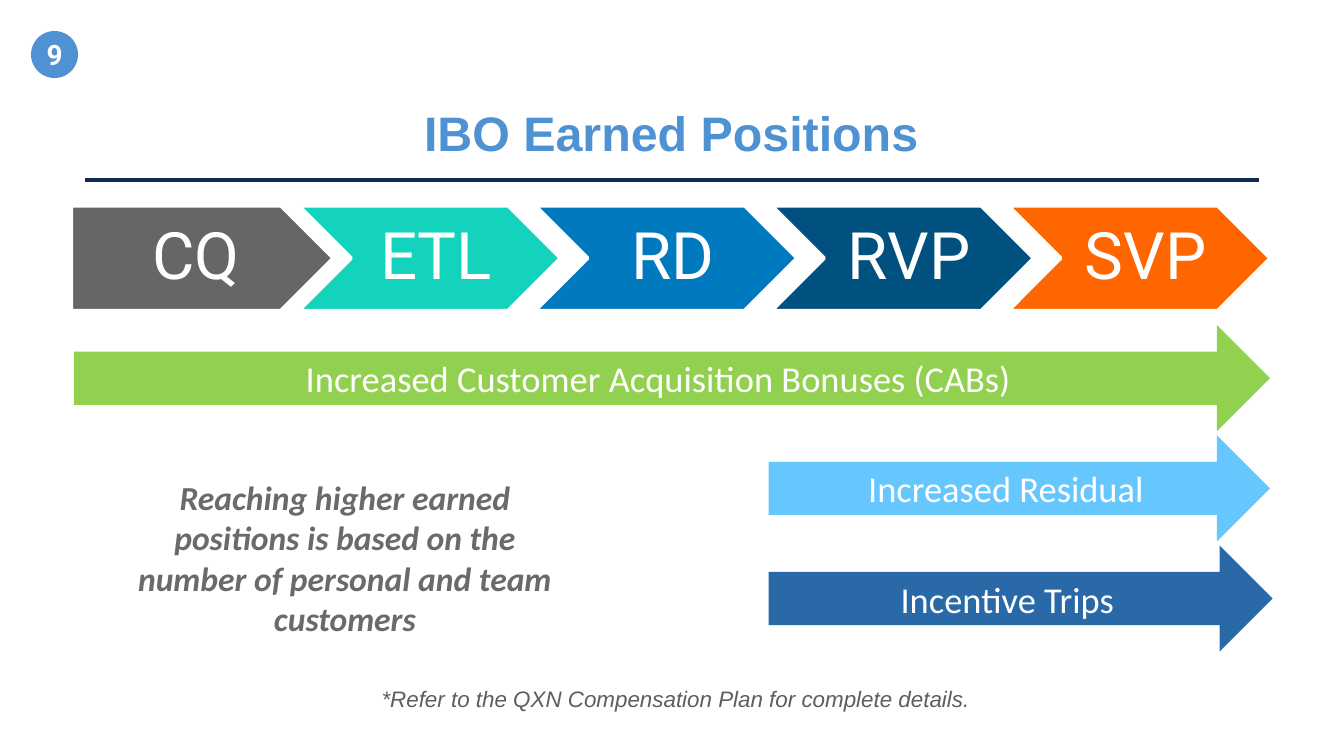
from dataclasses import dataclass

from lxml import etree
from pptx import Presentation
from pptx.dml.color import RGBColor
from pptx.enum import shapes, text
from pptx.oxml import ns
from pptx.util import Pt

WHITE = "FFFFFF"
BLUE = "4F92D3"
SHAPE = shapes.MSO_SHAPE
CENTER, LEFT = text.PP_ALIGN.CENTER, text.PP_ALIGN.LEFT
TOP, MIDDLE = text.MSO_ANCHOR.TOP, text.MSO_ANCHOR.MIDDLE


@dataclass(frozen=True)
class Area:
    left: float
    top: float
    width: float
    height: float

    def lengths(self) -> tuple:
        return Pt(self.left), Pt(self.top), Pt(self.width), Pt(self.height)


@dataclass(frozen=True)
class Style:
    font: str
    size: float
    color: str = WHITE
    bold: bool = False
    italic: bool = False
    align: int = CENTER
    anchor: int = MIDDLE
    spacing: float = 1.0
    wrap: bool = True
    margins: tuple = (7.2, 3.6, 7.2, 3.6)


@dataclass(frozen=True)
class Position:
    name: str
    color: str


@dataclass(frozen=True)
class Benefit:
    name: str
    color: str
    left: float
    width: float


TIGHT = (2, 2, 2, 2)
TITLE = Style("Arial", 25.9, BLUE, bold=True, anchor=TOP, spacing=0.8,
              wrap=False, margins=TIGHT)
NUMBER = Style("Roboto", 15, bold=True, wrap=False, margins=TIGHT)
POSITION = Style("Roboto", 35, spacing=0.9, margins=(10.8, 3.6, 3.6, 3.6))
BENEFIT = Style("Calibri", 19.5)
REMARK = Style("Calibri", 18, "6C6969", bold=True, italic=True, anchor=TOP)
FOOTNOTE = Style("Arial", 12, "5E5E5E", italic=True, align=LEFT,
                 wrap=False, margins=TIGHT)

POSITIONS = [
    Position("CQ", "666666"),
    Position("ETL", "13D3BC"),
    Position("RD", "0079BF"),
    Position("RVP", "005180"),
    Position("SVP", "FF6600"),
]
BENEFITS = [
    Benefit("Increased Customer Acquisition Bonuses (CABs)", "92D050", 39.6, 640.8),
    Benefit("Increased Residual", "66C7FF", 411.8, 268.6),
    Benefit("Incentive Trips", "2A69A8", 411.8, 270),
]


def rgb(color: str) -> RGBColor:
    return RGBColor.from_string(color)


def write(box, words: str, style: Style) -> None:
    frame = box.text_frame
    frame.text = words
    frame.word_wrap = style.wrap
    frame.vertical_anchor = style.anchor
    (frame.margin_left, frame.margin_top,
     frame.margin_right, frame.margin_bottom) = map(Pt, style.margins)
    para = frame.paragraphs[0]
    para.alignment = style.align
    para.line_spacing = style.spacing
    font = para.runs[0].font
    font.name, font.size = style.font, Pt(style.size)
    font.bold, font.italic = style.bold, style.italic
    font.color.rgb = rgb(style.color)


def add_text(page, area: Area, words: str, style: Style) -> None:
    write(page.shapes.add_textbox(*area.lengths()), words, style)


def add_filled(page, kind, area: Area, color: str):
    shape = page.shapes.add_shape(kind, *area.lengths())
    shape.shadow.inherit = False
    shape.fill.solid()
    shape.fill.fore_color.rgb = rgb(color)
    shape.line.fill.background()
    return shape


def add_rule(page, left: float, right: float, y: float) -> None:
    rule = page.shapes.add_connector(
        shapes.MSO_CONNECTOR.STRAIGHT, Pt(left), Pt(y), Pt(right), Pt(y))
    rule.line.color.rgb = rgb("102C53")
    rule.line.width = Pt(2)
    etree.SubElement(rule._element.spPr, ns.qn("a:effectLst"))


def add_position(page, index: int, position: Position) -> None:
    """Draw one step; the first has a flat left edge and a wider label."""
    top, width, height, pitch = 110.2, 140.4, 56.2, 126.7
    if index == 0:
        kind, left, label_left, label_width = SHAPE.PENTAGON, 38.2, 38.2, 126.7
    else:
        left = 160 + (index - 1) * pitch
        kind, label_left, label_width = SHAPE.CHEVRON, left + 28, 84.2
    step = add_filled(page, kind, Area(left, top, width, height), position.color)
    step.line.color.rgb = rgb(WHITE)
    step.line.width = Pt(2)
    add_text(page, Area(label_left, top, label_width, height), position.name, POSITION)


def add_benefit(page, index: int, benefit: Benefit) -> None:
    area = Area(benefit.left, 174.2 + index * 59, benefit.width, 56.9)
    write(add_filled(page, SHAPE.RIGHT_ARROW, area, benefit.color), benefit.name, BENEFIT)


def main() -> None:
    deck = Presentation()
    deck.slide_width, deck.slide_height = Pt(720), Pt(405)
    page = deck.slides.add_slide(deck.slide_layouts[6])

    add_rule(page, 45.4, 674.6, 96.6)
    add_filled(page, SHAPE.OVAL, Area(16.6, 16.6, 25.2, 25.2), BLUE)
    add_text(page, Area(22.7, 18, 13, 22.4), "9", NUMBER)
    add_text(page, Area(224, 59, 271.4, 30.2), "IBO Earned Positions", TITLE)
    for index, benefit in enumerate(BENEFITS):
        add_benefit(page, index, benefit)
    add_text(page, Area(57, 252, 255.6, 94.4),
             "Reaching higher earned positions is based on the number of "
             "personal and team customers", REMARK)
    for index, position in enumerate(POSITIONS):
        add_position(page, index, position)
    add_text(page, Area(202.4, 365, 321, 18.8),
             "*Refer to the QXN Compensation Plan for complete details.", FOOTNOTE)

    deck.save("out.pptx")


if __name__ == "__main__":
    main()
